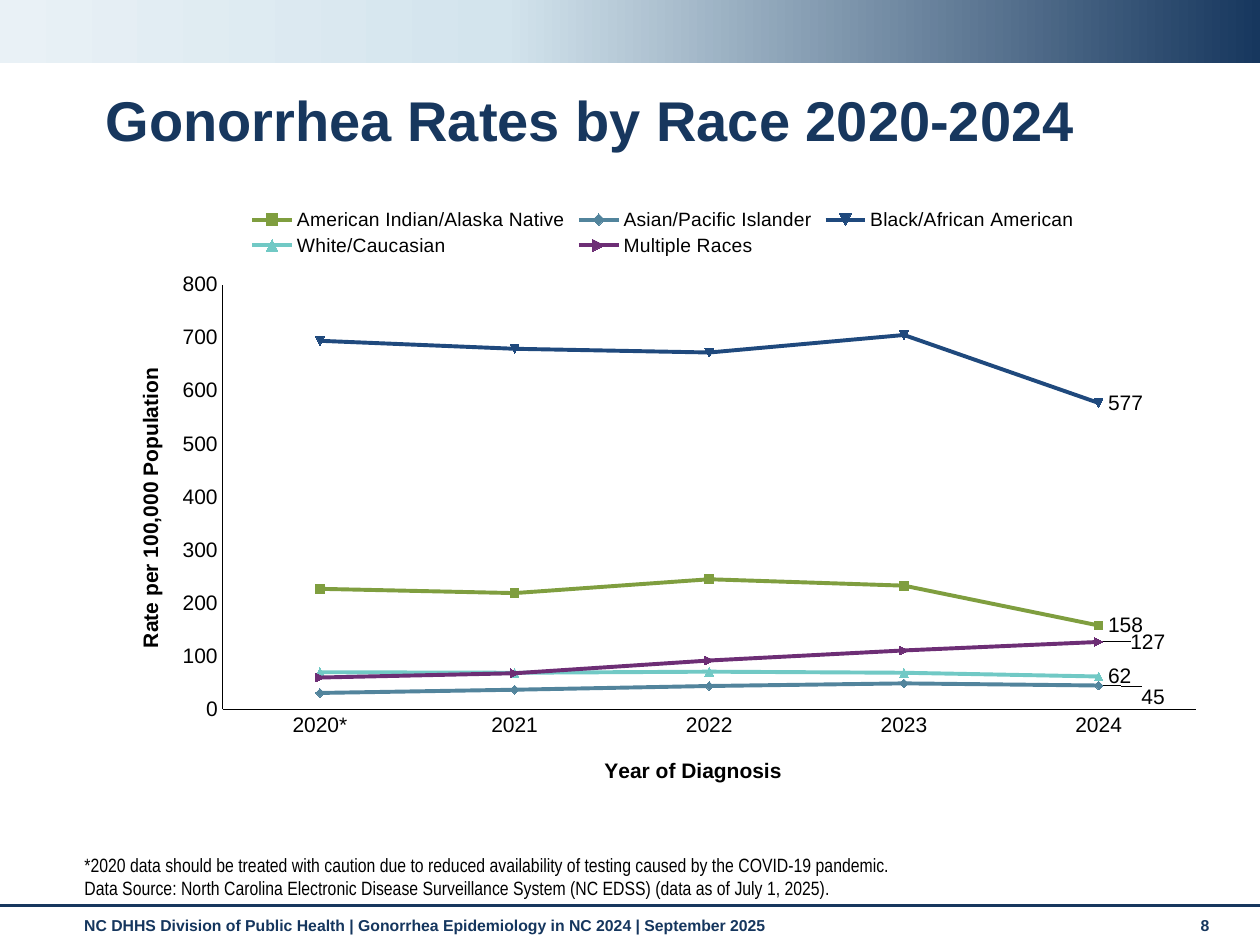
from lxml import etree
from pptx import Presentation
from pptx.chart.data import CategoryChartData
from pptx.dml.color import RGBColor
from pptx.enum.chart import XL_CHART_TYPE as ChartType, XL_LABEL_POSITION as LabelPosition
from pptx.enum.chart import XL_LEGEND_POSITION as LegendPosition, XL_TICK_MARK as TickMark
from pptx.enum.shapes import MSO_CONNECTOR as Connector, MSO_SHAPE as Shape
from pptx.enum.text import MSO_ANCHOR as Anchor, MSO_AUTO_SIZE as AutoSize, PP_ALIGN as Align
from pptx.oxml import parse_xml
from pptx.oxml.ns import nsdecls, qn
from pptx.util import Inches, Pt

COLORS = {"navy": "17375E", "footer": "15365E", "black": "000000",
          "sky": "D3E4ED", "mist": "E9F1F6"}
YEARS = ["2020*", "2021", "2022", "2023", "2024"]
# name, colour, rates, shift of the last label as a share of the chart
SERIES = [
    ("American Indian/Alaska Native", "7F9E3F", (227, 219, 245, 233, 158), None),
    ("Asian/Pacific Islander", "52849C", (31, 37, 44, 49, 45), (0.03, 0.02)),
    ("Black/African American", "1F497D", (694, 679, 672, 705, 577), None),
    ("White/Caucasian", "71C9C5", (70, 69, 71, 69, 62), None),
    ("Multiple Races", "6D2E75", (60, 68, 92, 111, 127), (0.02, 0)),
]


def rgb(color):
    return RGBColor.from_string(COLORS.get(color, color))


def layout_xml(inner=False, **shares):
    """Manual chart layout from x, y, w, h given as shares of the chart."""
    target = '<c:layoutTarget val="inner"/>' if inner else ""
    modes = "".join(f'<c:{key}Mode val="edge"/>' for key in shares if key in "xy")
    values = "".join(f'<c:{key} val="{value}"/>' for key, value in shares.items())
    return parse_xml(f'<c:layout {nsdecls("c")}><c:manualLayout>{target}{modes}{values}'
                     '</c:manualLayout></c:layout>')


def label_shift_xml(x, y):
    return parse_xml(f'<c:layout {nsdecls("c")}><c:manualLayout><c:x val="{x}"/>'
                     f'<c:y val="{y}"/></c:manualLayout></c:layout>')


def set_layout(element, layout, index):
    for old in element.findall(qn("c:layout")):
        element.remove(old)
    element.insert(index, layout)


class SlideBuilder:
    def __init__(self, slide):
        self.slide = slide

    def font(self, font, size, color="black", bold=False, name="Arial"):
        values = {"size": Pt(size), "bold": bold, "name": name}
        for key, value in values.items():
            setattr(font, key, value)
        font.color.rgb = rgb(color)

    def fill_text(self, shape, box, lines, anchor=Anchor.TOP, spacing=1.0, **style):
        for key, value in zip(("left", "top", "width", "height"), box):
            setattr(shape, key, Inches(value))
        frame = shape.text_frame
        values = {"word_wrap": True, "auto_size": AutoSize.NONE, "vertical_anchor": anchor}
        for key, value in values.items():
            setattr(frame, key, value)
        frame.text = "\n".join(lines)
        for paragraph in frame.paragraphs:
            values = {"alignment": Align.LEFT, "line_spacing": spacing, "space_before": Pt(0)}
            for key, value in values.items():
                setattr(paragraph, key, value)
            self.font(paragraph.runs[0].font, **style)
        return frame

    def text(self, box, line, **style):
        shape = self.slide.shapes.add_textbox(*map(Inches, box))
        self.fill_text(shape, box, [line], **style)

    def title(self, box, line, **style):
        self.fill_text(self.slide.shapes.title, box, [line], Anchor.MIDDLE, 0.9, **style)

    def notes(self, box, lines, **style):
        frame = self.fill_text(self.slide.placeholders[1], box, lines, Anchor.BOTTOM, **style)
        for paragraph in frame.paragraphs:
            properties = paragraph._p.get_or_add_pPr()
            properties.set("marL", "0")
            properties.set("indent", "0")
            etree.SubElement(properties, qn("a:buNone"))

    def band(self, box, stops):
        shape = self.slide.shapes.add_shape(Shape.RECTANGLE, *map(Inches, box))
        shape.shadow.inherit = False
        shape.line.fill.background()
        shape.fill.gradient()
        shape.fill.gradient_angle = 180
        stop_list = shape._element.spPr.find(qn("a:gradFill")).find(qn("a:gsLst"))
        for old in list(stop_list):
            stop_list.remove(old)
        for percent, color in stops:
            stop = etree.SubElement(stop_list, qn("a:gs"), pos=str(percent * 1000))
            etree.SubElement(stop, qn("a:srgbClr"), val=COLORS[color])

    def rule(self, start, end, color, width):
        line = self.slide.shapes.add_connector(Connector.STRAIGHT, *map(Inches, start + end))
        line.line.color.rgb = rgb(color)
        line.line.width = Pt(width)
        etree.SubElement(line._element.spPr, qn("a:effectLst"))

    def axis(self, axis, title, x, y):
        values = {"has_major_gridlines": False, "major_tick_mark": TickMark.NONE,
                  "minor_tick_mark": TickMark.NONE}
        for key, value in values.items():
            setattr(axis, key, value)
        self.font(axis.tick_labels.font, 12)
        axis.format.line.color.rgb = rgb("black")
        axis.format.line.width = Pt(0.75)
        frame = axis.axis_title.text_frame
        frame.text = title
        self.font(frame.paragraphs[0].runs[0].font, 12, bold=True)
        set_layout(axis.axis_title._element, layout_xml(x=x, y=y), 1)

    def line_chart(self, box):
        data = CategoryChartData(number_format="#,##0")
        data.categories = YEARS
        for name, _, rates, _ in SERIES:
            data.add_series(name, rates)
        chart = self.slide.shapes.add_chart(ChartType.LINE, *map(Inches, box), data).chart
        chart.has_title = False
        self.font(chart.font, 10)
        plot = chart.plots[0]
        plot.vary_by_categories = False
        set_layout(chart._chartSpace.chart.plotArea,
                   layout_xml(inner=True, x=0.107, y=0.15, w=0.873, h=0.694), 0)

        # Axes
        self.axis(chart.category_axis, "Year of Diagnosis", 0.446, 0.917)
        self.axis(chart.value_axis, "Rate per 100,000 Population", 0.027, 0.28)
        for key, value in {"minimum_scale": 0, "maximum_scale": 800, "major_unit": 100}.items():
            setattr(chart.value_axis, key, value)

        # Legend
        chart.has_legend = True
        legend = chart.legend
        legend.position = LegendPosition.TOP
        legend.include_in_layout = False
        self.font(legend.font, 11)
        set_layout(legend._element, layout_xml(x=0.127, y=0.02, w=0.75, h=0.09), 1)

        # Lines, with a label on the last year only
        for series, (_, color, rates, shift) in zip(plot.series, SERIES):
            series.smooth = False
            series.marker.style = None
            series.format.line.color.rgb = rgb(color)
            series.format.line.width = Pt(2.25)
            series.data_labels.show_value = False
            label = series.points[len(rates) - 1].data_label
            self.font(label.font, 12)
            label.position = LabelPosition.RIGHT
            if shift:
                element = series.data_labels._element.find(qn("c:dLbl"))
                set_layout(element, label_shift_xml(*shift), 1)


def main():
    presentation = Presentation()
    presentation.slide_width, presentation.slide_height = Inches(10), Inches(7.5)
    slide = presentation.slides.add_slide(presentation.slide_layouts[1])
    builder = SlideBuilder(slide)

    # Header band and footer
    builder.band((0, 0, 10, 0.5), [(0, "navy"), (60, "sky"), (100, "mist")])
    builder.rule((0, 7.19), (10, 7.19), "navy", 1.75)
    footer = {"size": 9, "color": "footer", "bold": True}
    builder.text((0.57, 7.22, 8.74, 0.29), "NC DHHS Division of Public Health | "
                 "Gonorrhea Epidemiology in NC 2024 | September 2025", **footer)
    builder.text((9.43, 7.22, 0.44, 0.3), "8", **footer)

    # Title, chart and source notes
    builder.title((0.74, 0.68, 8.58, 0.6), "Gonorrhea Rates by Race 2020-2024",
                  size=32, color="navy", bold=True)
    builder.line_chart((0.82, 1.53, 8.85, 4.86))
    builder.notes((0.57, 6.83, 9.1, 0.36), [
        "*2020 data should be treated with caution due to reduced availability of testing "
        "caused by the COVID-19 pandemic.",
        "Data Source: North Carolina Electronic Disease Surveillance System (NC EDSS) "
        "(data as of July 1, 2025).",
    ], size=11, name="Arial Narrow")
    presentation.save("out.pptx")


if __name__ == "__main__":
    main()
